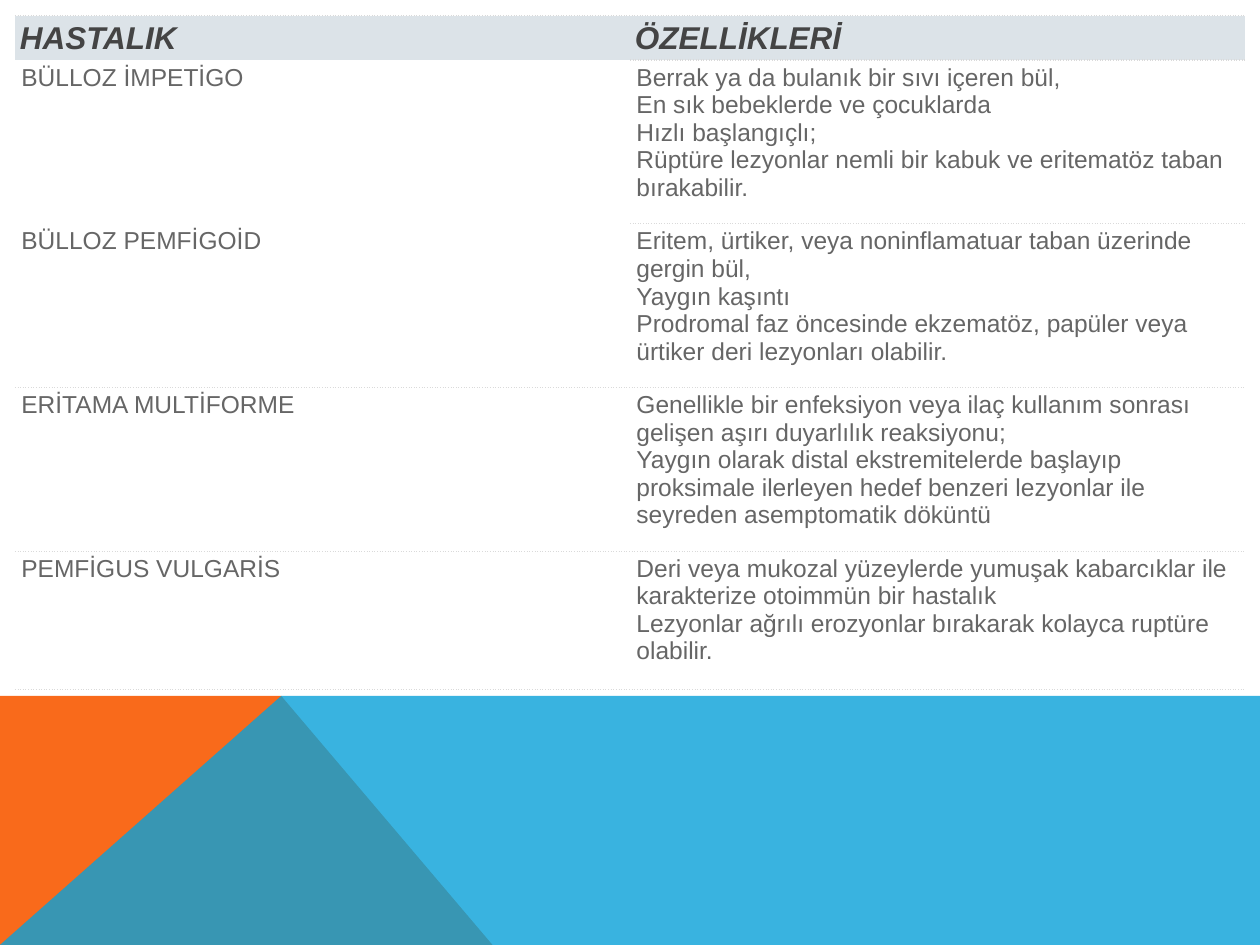
from lxml.etree import SubElement as add_child
from pptx import Presentation
from pptx.dml.color import RGBColor
from pptx.enum.text import MSO_ANCHOR as Anchor
from pptx.oxml import parse_xml
from pptx.oxml.ns import nsdecls, qn
from pptx.util import Cm, Pt

HEADINGS = ["HASTALIK", "ÖZELLİKLERİ"]
DISEASES = [
    ("BÜLLOZ İMPETİGO", [
        "Berrak ya da bulanık bir sıvı içeren bül,",
        "En sık bebeklerde ve çocuklarda",
        "Hızlı başlangıçlı;",
        "Rüptüre lezyonlar nemli bir kabuk ve eritematöz taban bırakabilir."]),
    ("BÜLLOZ PEMFİGOİD", [
        "Eritem, ürtiker, veya noninflamatuar taban üzerinde gergin bül,",
        "Yaygın kaşıntı",
        "Prodromal faz öncesinde ekzematöz, papüler veya ürtiker deri lezyonları olabilir."]),
    ("ERİTAMA MULTİFORME", [
        "Genellikle bir enfeksiyon veya ilaç kullanım sonrası gelişen aşırı duyarlılık reaksiyonu;",
        "Yaygın olarak distal ekstremitelerde başlayıp proksimale ilerleyen hedef benzeri "
        "lezyonlar ile seyreden asemptomatik döküntü"]),
    ("PEMFİGUS VULGARİS", [
        "Deri veya mukozal yüzeylerde yumuşak kabarcıklar ile karakterize otoimmün bir hastalık",
        "Lezyonlar ağrılı erozyonlar bırakarak kolayca ruptüre olabilir."]),
]
LEFT_COLUMN_EDGES = ["T", "", "B", "TB", "TB"]
ROW_HEIGHTS = [0.89, 3.3, 3.3, 3.3, 2.79]
COLUMN_WIDTH = 12.4


def color(code):
    return RGBColor.from_string(code)


class SlideBuilder:
    font = "Arial"
    rule = "DADADA"

    def __init__(self, page):
        self.page = page

    def polygon(self, points, fill, opacity=100):
        corners = [(Cm(x), Cm(y)) for x, y in points]
        builder = self.page.shapes.build_freeform(*corners[0])
        builder.add_line_segments(corners[1:], close=True)
        shape = builder.convert_to_shape()
        shape.shadow.inherit = False
        shape.fill.solid()
        shape.fill.fore_color.rgb = color(fill)
        shape.line.fill.background()
        if opacity < 100:
            tint = shape.fill._xPr.find(".//" + qn("a:srgbClr"))
            add_child(tint, qn("a:alpha"), val=str(opacity * 1000))

    def table(self, left, top, widths, heights):
        frame = self.page.shapes.add_table(
            len(heights), len(widths), Cm(left), Cm(top), Cm(sum(widths)), Cm(sum(heights)))
        grid = frame.table
        for column, width in zip(grid.columns, widths):
            column.width = Cm(width)
        for row, height in zip(grid.rows, heights):
            row.height = Cm(height)
        return grid

    def cell(self, cell, lines, edges, heading=False):
        cell.fill.solid()
        cell.fill.fore_color.rgb = color("DCE3E8" if heading else "FFFFFF")
        cell.vertical_anchor = Anchor.BOTTOM if heading else Anchor.TOP
        cell.margin_left = Cm(0.1 if heading else 0.13)
        cell.margin_right = Cm(0.13)
        cell.margin_top = cell.margin_bottom = Cm(0.08)
        for index, line in enumerate(lines):
            frame = cell.text_frame
            para = frame.add_paragraph() if index else frame.paragraphs[0]
            span = para.add_run()
            span.text = line
            span.font.name = self.font
            span.font.size = Pt(18 if heading else 14)
            span.font.bold = span.font.italic = heading
            span.font.color.rgb = color("444444" if heading else "666666")
        self.borders(cell, edges)

    def borders(self, cell, edges):
        properties = cell._tc.get_or_add_tcPr()
        for index, side in enumerate("LRTB"):
            paint = "<a:noFill/>"
            if side in edges:
                paint = (f'<a:solidFill><a:srgbClr val="{self.rule}"/></a:solidFill>'
                         '<a:prstDash val="dot"/>')
            line = parse_xml(f'<a:ln{side} {nsdecls("a")} w="{Pt(0.75)}">{paint}</a:ln{side}>')
            properties.insert(index, line)


def main():
    deck = Presentation()
    deck.slide_width, deck.slide_height = Cm(25.4), Cm(19.05)
    builder = SlideBuilder(deck.slides.add_slide(deck.slide_layouts[6]))

    bottom, horizon, peak = 19.05, 14.03, 5.67
    builder.polygon([(0, bottom), (0, horizon), (peak, horizon), (9.93, bottom)], "F96A1B")
    builder.polygon([(0, bottom), (peak, horizon), (25.4, horizon), (25.4, bottom)],
                    "08A1D9", opacity=80)

    grid = builder.table(0.3, 0.32, [COLUMN_WIDTH] * 2, ROW_HEIGHTS)
    rows = [(HEADINGS[0], HEADINGS[1:])] + DISEASES
    for index, ((name, features), edges) in enumerate(zip(rows, LEFT_COLUMN_EDGES)):
        heading = index == 0
        builder.cell(grid.cell(index, 0), [name], edges, heading)
        builder.cell(grid.cell(index, 1), features, "TB", heading)
    deck.save("out.pptx")


if __name__ == "__main__":
    main()
